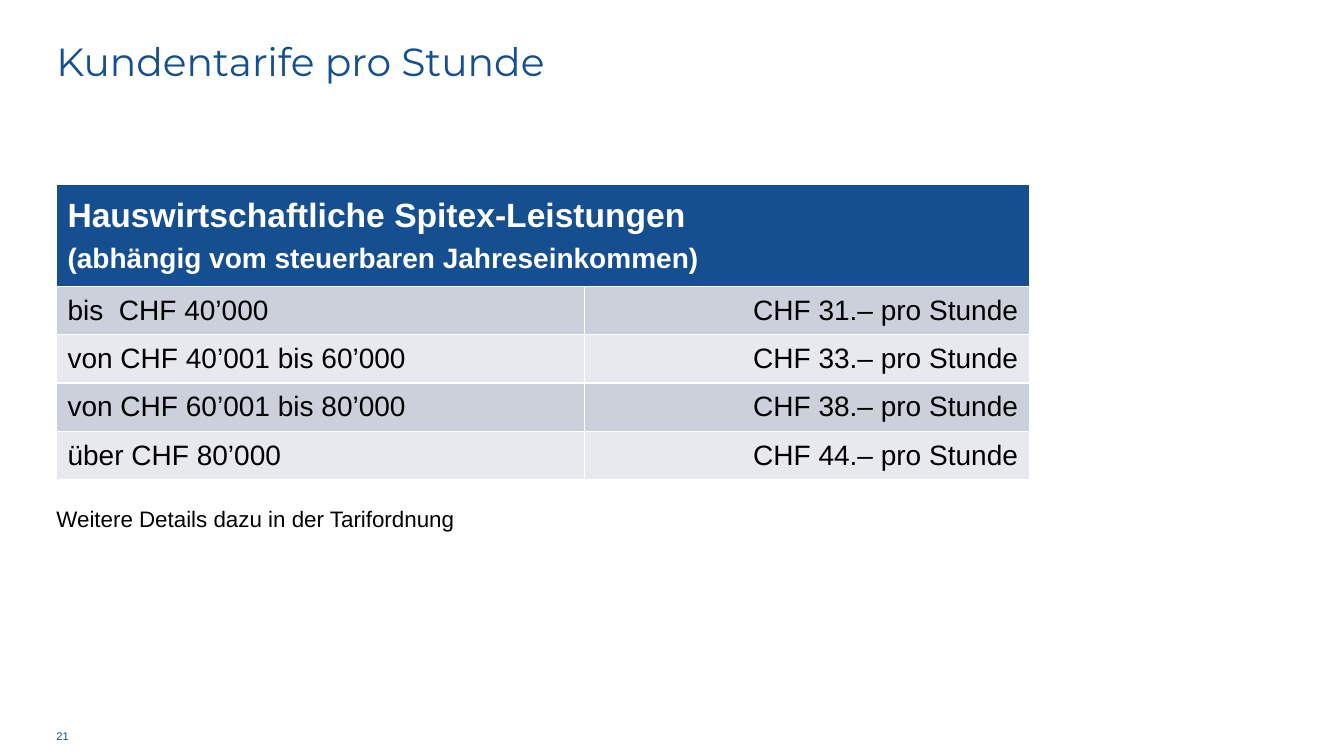
from pptx import Presentation
from pptx.dml.color import RGBColor
from pptx.enum.text import MSO_ANCHOR, PP_ALIGN
from pptx.util import Pt

PX = 9144  # EMU per px, 100 px to the inch

BLUE = RGBColor(0x15, 0x4F, 0x90)
WHITE = RGBColor(0xFF, 0xFF, 0xFF)
BLACK = RGBColor(0x00, 0x00, 0x00)
BAND_DARK = RGBColor(0xCC, 0xD0, 0xDB)
BAND_LIGHT = RGBColor(0xE8, 0xE9, 0xEE)

LEFT = 56
COLUMN_WIDTHS = (524, 441)
HEADER_HEIGHT = 101
ROW_HEIGHT = 48

HEADER_LINES = (
    ("Hauswirtschaftliche Spitex-Leistungen", 24),
    ("(abhängig vom steuerbaren Jahreseinkommen)", 20),
)
TARIFFS = (
    ("bis  CHF 40’000", "CHF 31.– pro Stunde"),
    ("von CHF 40’001 bis 60’000", "CHF 33.– pro Stunde"),
    ("von CHF 60’001 bis 80’000", "CHF 38.– pro Stunde"),
    ("über CHF 80’000", "CHF 44.– pro Stunde"),
)


def set_font(paragraph, size, color, name="Arial", bold=False):
    font = paragraph.font
    font.name = name
    font.size = Pt(size)
    font.bold = bold
    font.color.rgb = color


def add_text(slide, box, text, size, color, name="Arial",
             anchor=MSO_ANCHOR.TOP, wrap=True):
    shape = slide.shapes.add_textbox(*(value * PX for value in box))
    frame = shape.text_frame
    frame.margin_left = frame.margin_right = 0
    frame.margin_top = frame.margin_bottom = 0
    frame.vertical_anchor = anchor
    frame.word_wrap = wrap
    paragraph = frame.paragraphs[0]
    paragraph.text = text
    set_font(paragraph, size, color, name)
    return paragraph


def fill_cell(cell, lines, fill, color, bold=False, align=PP_ALIGN.LEFT):
    """Write (text, size) lines into a filled cell, one paragraph each."""
    cell.fill.solid()
    cell.fill.fore_color.rgb = fill
    cell.vertical_anchor = MSO_ANCHOR.MIDDLE
    cell.margin_left = cell.margin_right = 11 * PX
    cell.margin_top = cell.margin_bottom = 5 * PX
    frame = cell.text_frame
    for index, (text, size) in enumerate(lines):
        paragraph = frame.add_paragraph() if index else frame.paragraphs[0]
        paragraph.text = text
        paragraph.alignment = align
        paragraph.space_after = Pt(6)
        set_font(paragraph, size, color, bold=bold)


def add_tariff_table(slide, left, top):
    height = HEADER_HEIGHT + ROW_HEIGHT * len(TARIFFS)
    table = slide.shapes.add_table(
        len(TARIFFS) + 1, len(COLUMN_WIDTHS),
        left * PX, top * PX, sum(COLUMN_WIDTHS) * PX, height * PX).table
    for column, width in zip(table.columns, COLUMN_WIDTHS):
        column.width = width * PX
    for index, row in enumerate(table.rows):
        row.height = (ROW_HEIGHT if index else HEADER_HEIGHT) * PX

    header = table.cell(0, 0)
    header.merge(table.cell(0, 1))
    fill_cell(header, HEADER_LINES, BLUE, WHITE, bold=True)

    for row, (income, price) in enumerate(TARIFFS, start=1):
        fill = BAND_DARK if row % 2 else BAND_LIGHT
        fill_cell(table.cell(row, 0), [(income, 20)], fill, BLACK)
        fill_cell(table.cell(row, 1), [(price, 20)], fill, BLACK,
                  align=PP_ALIGN.RIGHT)


def build_tariff_slide(presentation):
    slide = presentation.slides.add_slide(presentation.slide_layouts[6])
    title = add_text(slide, (LEFT, 42, 1205, 93), "Kundentarife pro Stunde",
                     28, BLUE, "Montserrat")
    title.line_spacing = 0.9
    add_tariff_table(slide, LEFT, 183)
    add_text(slide, (LEFT, 718, 67, 24), "21", 8, BLUE,
             anchor=MSO_ANCHOR.MIDDLE)
    add_text(slide, (LEFT, 501, 399, 27),
             "Weitere Details dazu in der Tarifordnung", 16, BLACK, wrap=False)


def main():
    presentation = Presentation()
    presentation.slide_width = 1333 * PX
    presentation.slide_height = 750 * PX
    build_tariff_slide(presentation)
    presentation.save("out.pptx")


if __name__ == "__main__":
    main()
